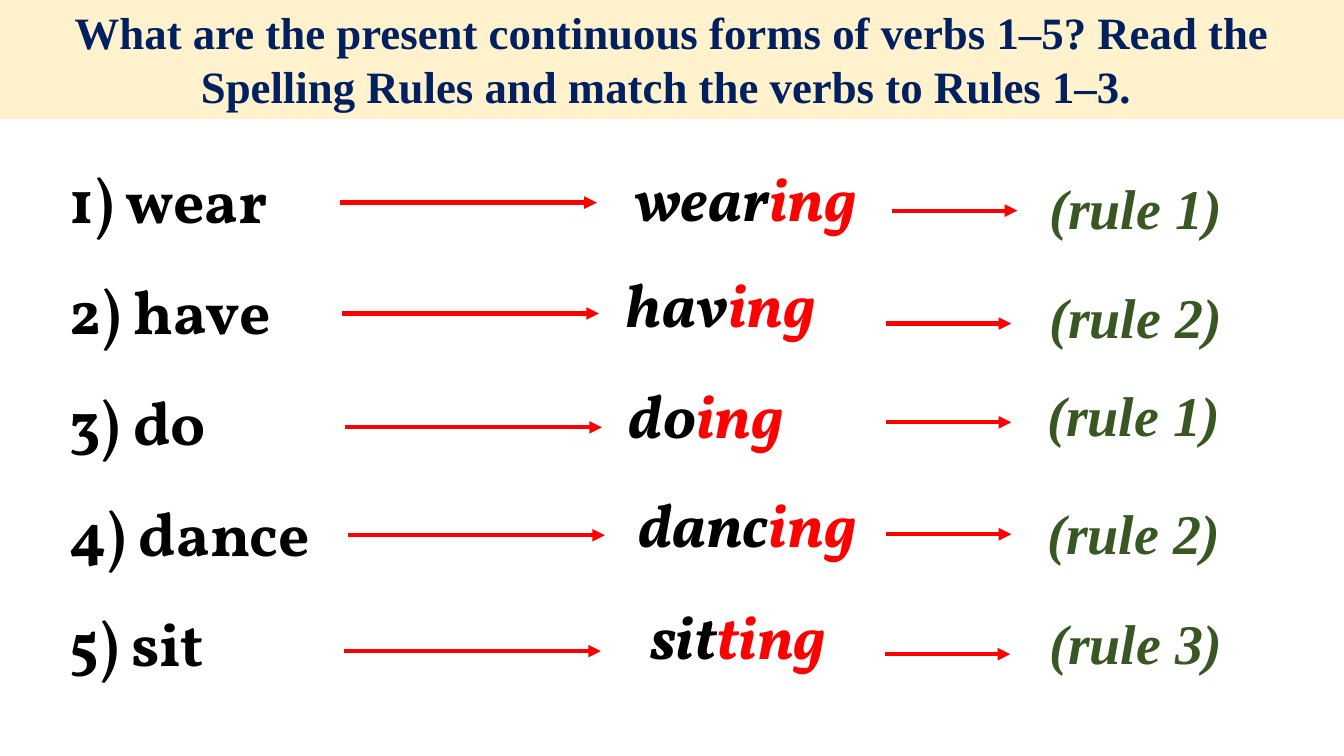
from lxml.etree import SubElement
from pptx import Presentation
from pptx.dml.color import RGBColor
from pptx.enum.shapes import MSO_CONNECTOR
from pptx.enum.text import MSO_ANCHOR, MSO_AUTO_SIZE, PP_ALIGN
from pptx.oxml.ns import qn
from pptx.util import Emu, Pt

EMU_PER_PX = 9144
SERIF = "Times New Roman"
DISPLAY = "Vollkorn"
BLACK, RED, GREEN, NAVY, CREAM = "000000", "FF0000", "385723", "002060", "FFF2CC"
QUESTION = (
    "What are the present continuous forms of verbs 1–5? "
    "Read the Spelling Rules and match the verbs to Rules 1–3. "
)
VERB_LISTS = [
    ("1) wear\n2) have\n3) do", 119, 330),
    ("4) dance\n5) sit", 449, 219),
]
ANSWERS = [
    ("wear", "ing", (619, 154)),
    ("hav", "ing", (611, 259)),
    ("do", "ing", (614, 369)),
    ("danc", "ing", (623, 477)),
    ("sit", "ting", (635, 588)),
]
ANSWER_ARROWS = [(337, 201), (339, 311), (342, 424), (345, 531), (341, 646)]
RULES = [
    (1, (885, 209), (1031, 167)),
    (2, (879, 321), (1031, 275)),
    (1, (879, 419), (1029, 373)),
    (2, (879, 530), (1029, 490)),
    (3, (878, 649), (1031, 599)),
]


def px(length):
    """Turn pixels into EMU."""
    return Emu(length * EMU_PER_PX)


def color(hex_code):
    """Turn a hex string into a colour."""
    return RGBColor.from_string(hex_code)


def style_run(run, font, size, hex_code, italic=False):
    """Format a run in bold type."""
    run.font.name = font
    run.font.size = Pt(size)
    run.font.bold = True
    run.font.italic = italic
    run.font.color.rgb = color(hex_code)


def add_text(shapes, left, top, width, height):
    """Add an empty wrapping text frame."""
    frame = shapes.add_textbox(px(left), px(top), px(width), px(height)).text_frame
    frame.word_wrap = True
    frame.auto_size = MSO_AUTO_SIZE.SHAPE_TO_FIT_TEXT
    return frame


def add_arrow(shapes, start, length):
    """Add a horizontal red arrow pointing right."""
    left, y = start
    arrow = shapes.add_connector(
        MSO_CONNECTOR.STRAIGHT, px(left), px(y), px(left + length), px(y)
    )
    arrow.line.color.rgb = color(RED)
    arrow.line.width = Pt(3)
    SubElement(arrow.line._get_or_add_ln(), qn("a:tailEnd"), type="triangle")
    SubElement(arrow._element.spPr, qn("a:effectLst"))


def set_question(title):
    """Place the question in a full-width banner."""
    title.left, title.top, title.width, title.height = map(px, (0, 0, 1333, 118))
    title.fill.solid()
    title.fill.fore_color.rgb = color(CREAM)
    frame = title.text_frame
    frame.text = QUESTION
    frame.word_wrap = True
    frame.auto_size = MSO_AUTO_SIZE.SHAPE_TO_FIT_TEXT
    frame.vertical_anchor = MSO_ANCHOR.TOP
    paragraph = frame.paragraphs[0]
    paragraph.alignment = PP_ALIGN.CENTER
    paragraph.line_spacing = 1.0
    style_run(paragraph.runs[0], SERIF, 32, NAVY)


def add_verbs(shapes, verbs, top, height):
    """Add a list of numbered verbs."""
    frame = add_text(shapes, 59, top, 666, height)
    frame.text = verbs
    for paragraph in frame.paragraphs:
        paragraph.line_spacing = 1.5
        style_run(paragraph.runs[0], DISPLAY, 44, BLACK)


def add_answer(shapes, stem, ending, position):
    """Add a verb form with its ending in red."""
    paragraph = add_text(shapes, *position, 243, 84).paragraphs[0]
    for part, hex_code in ((stem, BLACK), (ending, RED)):
        run = paragraph.add_run()
        run.text = part
        style_run(run, DISPLAY, 44, hex_code, italic=True)


def add_rule(shapes, number, arrow_start, position):
    """Add a grouped arrow and rule label."""
    group = shapes.add_group_shape().shapes
    add_arrow(group, arrow_start, 124)
    frame = add_text(group, *position, 261, 77)
    frame.text = f"(rule {number})"
    style_run(frame.paragraphs[0].runs[0], SERIF, 40, GREEN, italic=True)


def main():
    """Build and save the slide."""
    deck = Presentation()
    deck.slide_width, deck.slide_height = px(1333), px(750)
    shapes = deck.slides.add_slide(deck.slide_layouts[5]).shapes
    set_question(shapes.title)
    for verbs, top, height in VERB_LISTS:
        add_verbs(shapes, verbs, top, height)
    for stem, ending, position in ANSWERS:
        add_answer(shapes, stem, ending, position)
    for start in ANSWER_ARROWS:
        add_arrow(shapes, start, 255)
    for number, arrow_start, position in RULES:
        add_rule(shapes, number, arrow_start, position)
    deck.save("out.pptx")


if __name__ == "__main__":
    main()
